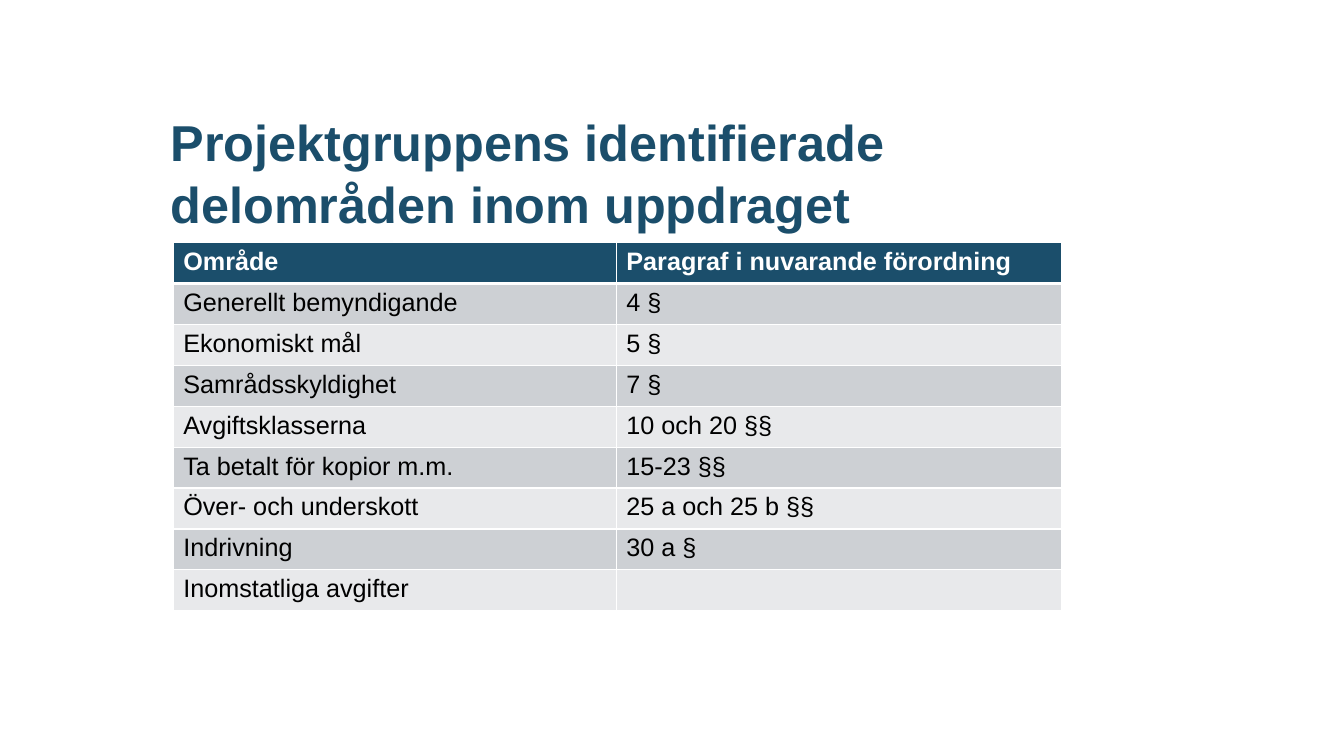
from dataclasses import dataclass

from lxml.etree import SubElement
from pptx import Presentation
from pptx.dml.color import RGBColor
from pptx.enum.text import MSO_ANCHOR, MSO_AUTO_SIZE, PP_ALIGN
from pptx.oxml.ns import qn
from pptx.util import Emu, Pt


@dataclass(frozen=True)
class Theme:
    """Fonts, type sizes and colours of the slide."""
    font: str = "Arial"
    title_size: int = 36
    table_size: int = 18
    blue: str = "1B4E6B"
    white: str = "FFFFFF"
    black: str = "000000"
    bands: tuple = ("CDD0D4", "E8E9EB")


THEME = Theme()
TITLE = "Projektgruppens identifierade delområden inom uppdraget"
COLUMNS = (422, 424)
ROW_HEIGHT = 39
ROWS = (
    ("Område", "Paragraf i nuvarande förordning"),
    ("Generellt bemyndigande", "4 §"),
    ("Ekonomiskt mål", "5 §"),
    ("Samrådsskyldighet", "7 §"),
    ("Avgiftsklasserna", "10 och 20 §§"),
    ("Ta betalt för kopior m.m.", "15-23 §§"),
    ("Över- och underskott", "25 a och 25 b §§"),
    ("Indrivning", "30 a §"),
    ("Inomstatliga avgifter", ""),
)


def px(n):
    """Convert pixels at 96 to the inch into EMU."""
    return Emu(n * 9525)


def add_run(p, text, size, color, bold):
    """Add one formatted run to a paragraph."""
    r = p.add_run()
    r.text = text
    r.font.name = THEME.font
    r.font.size = Pt(size)
    r.font.bold = bold
    r.font.color.rgb = RGBColor.from_string(color)


def set_title(s, text, left, top, width, height):
    """Place and fill the title placeholder."""
    sp = s.shapes.title
    sp.left, sp.top, sp.width, sp.height = map(px, (left, top, width, height))
    tf = sp.text_frame
    tf.word_wrap = True
    tf.auto_size = MSO_AUTO_SIZE.NONE
    tf.vertical_anchor = MSO_ANCHOR.MIDDLE
    p = tf.paragraphs[0]
    p.alignment = PP_ALIGN.LEFT
    p.line_spacing = 1.04
    add_run(p, text, THEME.title_size, THEME.blue, True)


def set_borders(cell, top, bottom):
    """Draw white cell borders with the given top and bottom widths."""
    tcPr = cell._tc.get_or_add_tcPr()
    for tag, width in (("a:lnL", 1), ("a:lnR", 1), ("a:lnT", top), ("a:lnB", bottom)):
        ln = SubElement(tcPr, qn(tag), w=str(Pt(width)))
        fill = SubElement(ln, qn("a:solidFill"))
        SubElement(fill, qn("a:srgbClr"), val=THEME.white)


def format_cell(cell, text, row):
    """Fill one cell as a header or as part of a banded row."""
    header = row == 0
    set_borders(cell, 3 if row == 1 else 1, 3 if header else 1)
    cell.fill.solid()
    fill = THEME.blue if header else THEME.bands[(row - 1) % 2]
    cell.fill.fore_color.rgb = RGBColor.from_string(fill)
    p = cell.text_frame.paragraphs[0]
    if text:
        color = THEME.white if header else THEME.black
        add_run(p, text, THEME.table_size, color, header)
    else:
        p.font.size = Pt(THEME.table_size)


def add_area_table(s, left, top):
    """Add the table of areas and their paragraphs."""
    width, height = sum(COLUMNS), ROW_HEIGHT * len(ROWS)
    frame = s.shapes.add_table(len(ROWS), len(COLUMNS), *map(px, (left, top, width, height)))
    table = frame.table
    for column, column_width in zip(table.columns, COLUMNS):
        column.width = px(column_width)
    for i, texts in enumerate(ROWS):
        table.rows[i].height = px(ROW_HEIGHT)
        for j, text in enumerate(texts):
            format_cell(table.cell(i, j), text, i)


def main():
    """Build and save the slide."""
    prs = Presentation()
    prs.slide_width, prs.slide_height = px(1280), px(720)
    s = prs.slides.add_slide(prs.slide_layouts[5])
    set_title(s, TITLE, 153, 103, 980, 120)
    add_area_table(s, 165, 231)
    prs.save("out.pptx")


if __name__ == "__main__":
    main()
